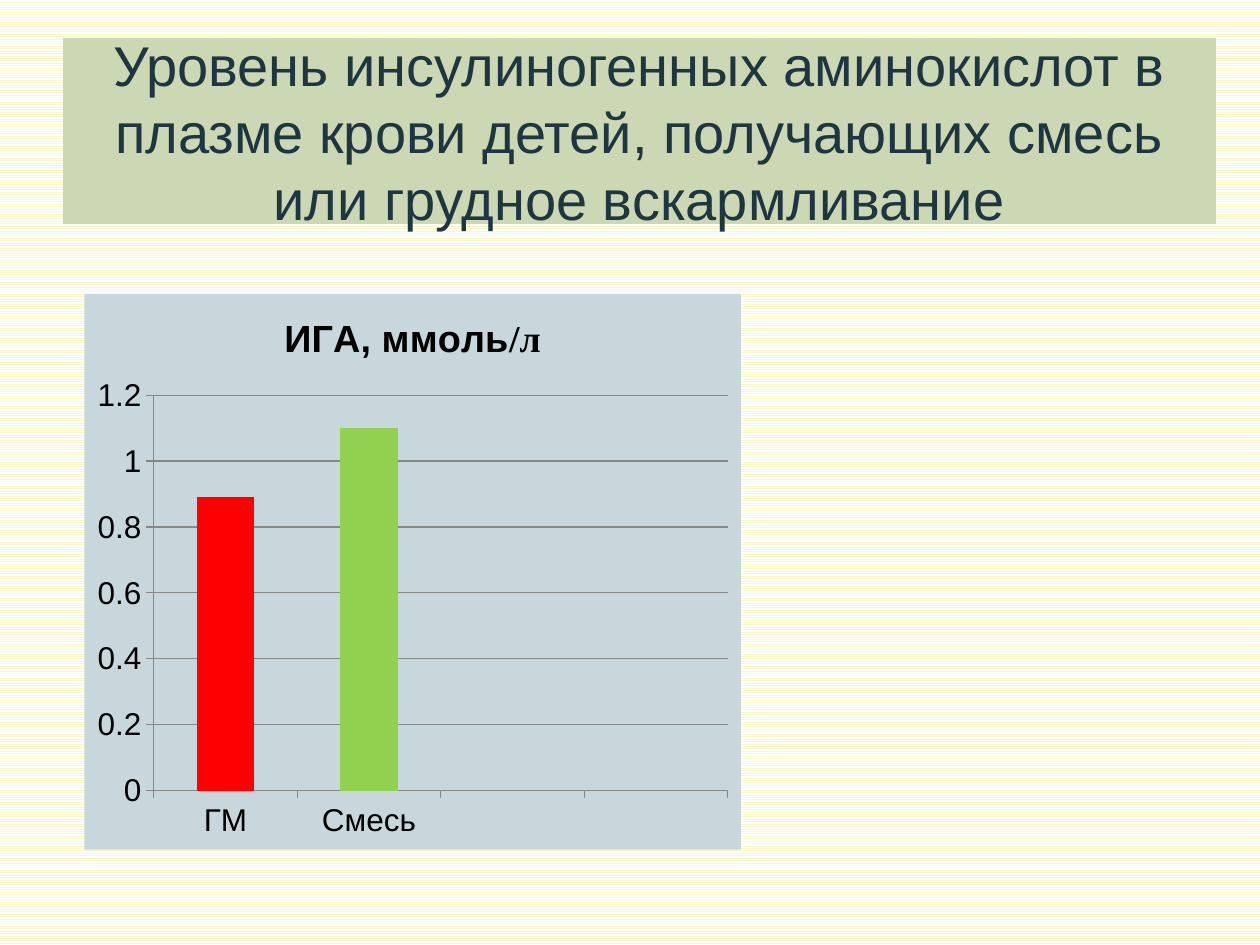
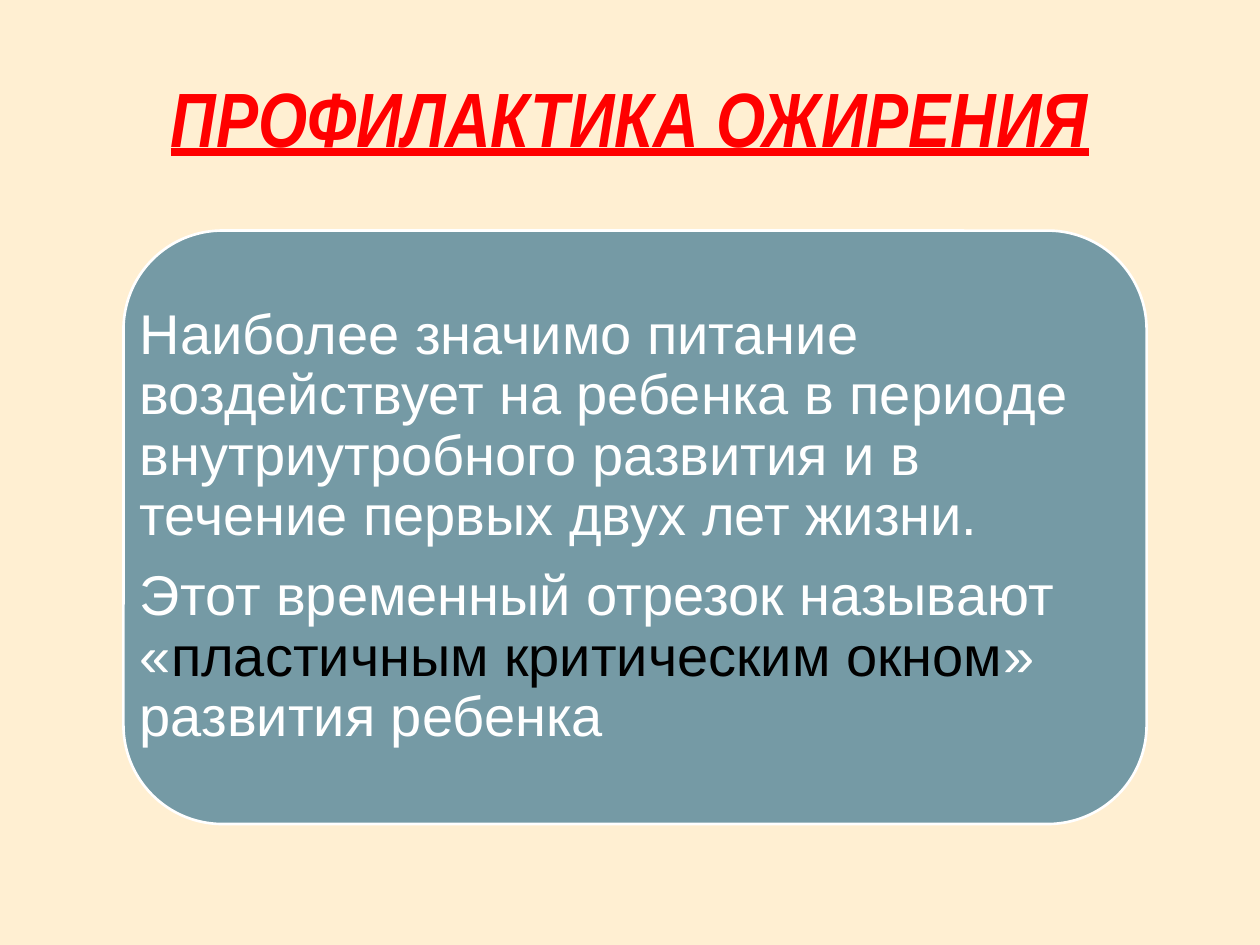
import pptx
import pptx.util
import pptx.chart.data
import pptx.dml.color
import pptx.enum.chart
import pptx.enum.dml
import pptx.enum.shapes
import pptx.enum.text

Pt = pptx.util.Pt
RGB = pptx.dml.color.RGBColor
RED = RGB(0xFF, 0x00, 0x00)
LIME = RGB(0x92, 0xD0, 0x50)
SAGE = RGB(0xCC, 0xD7, 0xB3)
NAVY = RGB(0x1D, 0x36, 0x41)
MIST = RGB(0xC8, 0xD7, 0xDB)
TEAL = RGB(0x75, 0x9A, 0xA5)
SAND = RGB(0xFF, 0xEF, 0xD2)
LEMON = RGB(0xFC, 0xF9, 0xC8)
GRAY = RGB(0x87, 0x87, 0x87)
WHITE = RGB(0xFF, 0xFF, 0xFF)
BLACK = RGB(0x00, 0x00, 0x00)

deck = pptx.Presentation()
deck.slide_width = pptx.util.Inches(10)
deck.slide_height = pptx.util.Inches(7.5)
blank = deck.slide_layouts[6]


def place(left, top, width, height):
    wide, high = deck.slide_width, deck.slide_height
    return int(left * wide), int(top * high), int(width * wide), int(height * high)


def add_title(slide, area, text, font, size, color):
    box = slide.shapes.add_textbox(*area)
    frame = box.text_frame
    frame.word_wrap = True
    frame.vertical_anchor = pptx.enum.text.MSO_ANCHOR.MIDDLE
    para = frame.paragraphs[0]
    para.text = text
    para.alignment = pptx.enum.text.PP_ALIGN.CENTER
    para.font.name = font
    para.font.size = Pt(size)
    para.font.color.rgb = color
    return box


slide = deck.slides.add_slide(blank)
back = slide.background.fill
back.patterned()
back.pattern = pptx.enum.dml.MSO_PATTERN.NARROW_HORIZONTAL
back.fore_color.rgb = LEMON
back.back_color.rgb = WHITE

title = add_title(
    slide, place(0.05, 0.04, 0.915, 0.197),
    "Уровень инсулиногенных аминокислот в плазме крови детей, "
    "получающих смесь или грудное вскармливание", "Arial", 32, NAVY)
title.fill.solid()
title.fill.fore_color.rgb = SAGE

data = pptx.chart.data.CategoryChartData()
data.categories = ["ГМ", "Смесь", "", ""]
data.add_series("Series 1", [0.89, 1.1, None, None])
chart = slide.shapes.add_chart(
    pptx.enum.chart.XL_CHART_TYPE.COLUMN_CLUSTERED,
    *place(0.067, 0.311, 0.521, 0.588), data).chart
chart.has_legend = False
chart.font.name = "Arial"
chart.font.size = Pt(18)
chart.font.color.rgb = BLACK

chart.has_title = True
head = chart.chart_title.text_frame.paragraphs[0]
head.font.size = Pt(21.6)
head.font.bold = True
for text, font in (("ИГА, ммоль", "Arial"), ("/л", "Times New Roman")):
    run = head.add_run()
    run.text = text
    run.font.name = font

plot = chart.plots[0]
plot.gap_width = 150
plot.vary_by_categories = False
bars = plot.series[0]
for part, color in ((bars, RED), (bars.points[1], LIME)):
    part.format.fill.solid()
    part.format.fill.fore_color.rgb = color

scale = chart.value_axis
scale.minimum_scale = 0
scale.maximum_scale = 1.2
scale.major_unit = 0.2
scale.has_major_gridlines = True
for part in (scale, chart.category_axis, scale.major_gridlines):
    part.format.line.color.rgb = GRAY
    part.format.line.width = Pt(0.75)

space = chart.element.find(pptx.oxml.ns.qn("c:chart"))
space.addnext(pptx.oxml.parse_xml(
    f'<c:spPr {pptx.oxml.ns.nsdecls("c", "a")}><a:solidFill>'
    f'<a:srgbClr val="{MIST}"/></a:solidFill><a:ln><a:noFill/></a:ln></c:spPr>'))

slide = deck.slides.add_slide(blank)
slide.background.fill.solid()
slide.background.fill.fore_color.rgb = SAND

title = add_title(slide, place(0.05, 0.04, 0.9, 0.167),
                  "ПРОФИЛАКТИКА ОЖИРЕНИЯ", "Arial Narrow", 44, RED)
font = title.text_frame.paragraphs[0].font
font.bold = font.italic = font.underline = True

area = place(0.098, 0.244, 0.812, 0.628)
panel = slide.shapes.add_shape(
    pptx.enum.shapes.MSO_SHAPE.ROUNDED_RECTANGLE, *area)
panel.shadow.inherit = False
panel.fill.solid()
panel.fill.fore_color.rgb = TEAL
panel.line.color.rgb = WHITE
panel.line.width = Pt(1.5)

frame = slide.shapes.add_textbox(*area).text_frame
frame.word_wrap = True
frame.vertical_anchor = pptx.enum.text.MSO_ANCHOR.MIDDLE
inset = pptx.util.Inches(0.13)
frame.margin_left = frame.margin_right = inset
frame.margin_top = frame.margin_bottom = inset

key = "пластичным критическим окном"
lines = [
    ["Наиболее значимо питание воздействует на ребенка в периоде "
     "внутриутробного развития и в течение первых двух лет жизни."],
    ["Этот временный отрезок называют «", key, "» развития ребенка"],
]
for row, parts in enumerate(lines):
    para = frame.add_paragraph() if row else frame.paragraphs[0]
    para.line_spacing = 0.9
    para.space_after = Pt(11.2)
    para.font.name = "Arial"
    para.font.size = Pt(32)
    for text in parts:
        run = para.add_run()
        run.text = text
        run.font.color.rgb = BLACK if text == key else WHITE

deck.save("out.pptx")
